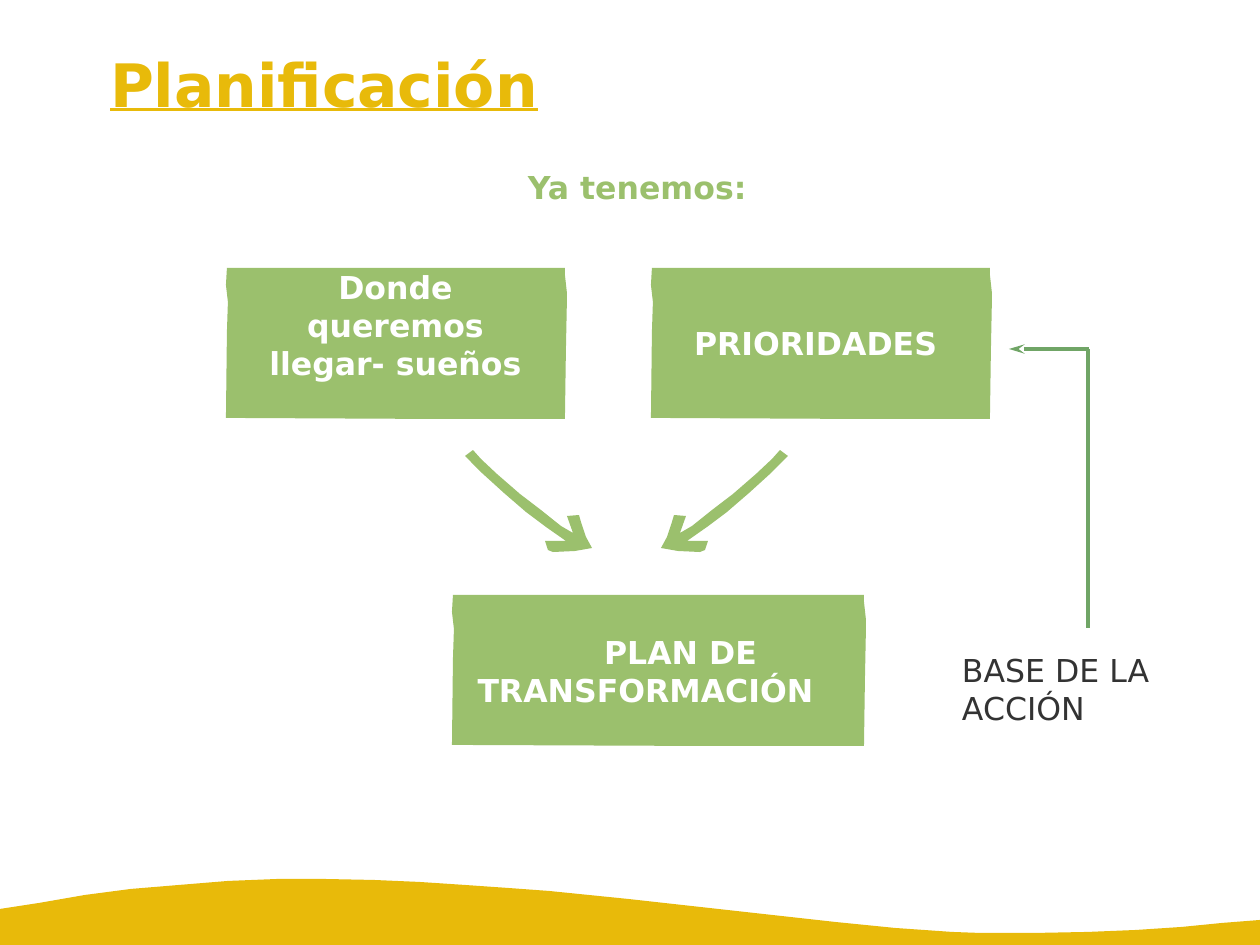
import pptx
import pptx.dml.color
import pptx.enum.shapes
import pptx.enum.text
import pptx.oxml.ns
import pptx.util
import lxml.etree

PX = 8064
FONT = "DejaVu Sans"
GOLD, GREEN, ARROW_GREEN = "E8BA0A", "9BC06D", "70A566"
WHITE, DARK = "FFFFFF", "333333"
LEFT = pptx.enum.text.PP_ALIGN.LEFT
CENTER = pptx.enum.text.PP_ALIGN.CENTER

WAVE = [
    (0, 30), (39, 24), (85, 16), (131, 10), (179, 6), (228, 2), (277, 0),
    (325, 0), (374, 1), (420, 3), (465, 6), (508, 9), (549, 12), (628, 20),
    (835, 43), (895, 49), (924, 51), (952, 53), (980, 54), (1035, 54),
    (1088, 53), (1136, 51), (1182, 48), (1222, 44), (1260, 41),
    (1260, 66), (0, 66),
]
BRUSH_ARROW = [
    (119, 0), (127, 6), (110, 23), (88, 43), (66, 62), (46, 77), (36, 84),
    (26, 91), (47, 91), (44, 100), (39, 102), (17, 101), (0, 98), (6, 87),
    (11, 72), (13, 65), (25, 66), (19, 83), (31, 76), (51, 60), (72, 44),
    (95, 24), (111, 9),
]


def color(value):
    return pptx.dml.color.RGBColor.from_string(value)


def add_outline(slide, box, points, fill):
    left, top = box[:2]
    placed = [(left + x, top + y) for x, y in points]
    builder = slide.shapes.build_freeform(*placed[0], scale=PX)
    builder.add_line_segments(placed[1:], close=True)
    shape = builder.convert_to_shape()
    shape.shadow.inherit = False
    shape.fill.solid()
    shape.fill.fore_color.rgb = color(fill)
    shape.line.fill.background()


def add_text(slide, box, text, fill, size=20, bold=True, underline=False,
             align=LEFT, spacing=None, indent=0):
    shape = slide.shapes.add_textbox(*(length * PX for length in box))
    frame = shape.text_frame
    frame.word_wrap = True
    frame.margin_left = frame.margin_right = 0
    frame.margin_top = frame.margin_bottom = 0
    paragraph = frame.paragraphs[0]
    paragraph.alignment = align
    if spacing:
        paragraph.line_spacing = pptx.util.Pt(spacing)
    if indent:
        paragraph._p.get_or_add_pPr().set("indent", str(indent * PX))
    run = paragraph.add_run()
    run.text = text
    run.font.name = FONT
    run.font.size = pptx.util.Pt(size)
    run.font.bold = bold
    run.font.underline = underline
    run.font.color.rgb = color(fill)


def add_card(slide, box, text, inset, align=LEFT, indent=0):
    left, top, width, height = box
    outline = [
        (1, 0), (0, 17), (2, 34), (1, 64), (0, height - 1),
        (round(width * 0.6), height), (width - 2, height),
        (width - 1, 83), (width, 32), (width, 25), (width - 2, 7),
        (width - 2, 0),
    ]
    add_outline(slide, box, outline, GREEN)
    inset_left, inset_top, text_width = inset
    text_box = (left + inset_left, top + inset_top, text_width, height - inset_top)
    add_text(slide, text_box, text, WHITE, align=align, indent=indent)


def add_brush_arrow(slide, box, mirrored=False):
    width = box[2]
    points = [(width - x if mirrored else x, y) for x, y in BRUSH_ARROW]
    add_outline(slide, box, points, GREEN)


def add_line(slide, start, end, arrowhead=False):
    connector = slide.shapes.add_connector(
        pptx.enum.shapes.MSO_CONNECTOR.STRAIGHT,
        *(length * PX for length in (*start, *end)))
    connector.line.color.rgb = color(ARROW_GREEN)
    connector.line.width = pptx.util.Pt(2)
    if arrowhead:
        lxml.etree.SubElement(
            connector.line._get_or_add_ln(), pptx.oxml.ns.qn("a:tailEnd"),
            type="stealth", w="med", len="lg")
    lxml.etree.SubElement(connector._element.spPr, pptx.oxml.ns.qn("a:effectLst"))


def add_feedback(slide, box):
    left, top, width, height = box
    right = left + width
    add_line(slide, (right, top + height), (right, top))
    add_line(slide, (right + 1, top), (left, top), arrowhead=True)
    add_text(slide, (right - 126, top + height + 23, 245, 76),
             "BASE DE LA ACCIÓN", DARK, bold=False)


def add_header(slide, box):
    left, top, width, height = box
    add_text(slide, (left, top, width, 71), "Planificación", GOLD,
             size=38, underline=True, spacing=44.5)
    add_text(slide, (left + 418, top + height - 39, 244, 39), "Ya tenemos:",
             GREEN, spacing=23.4)


def add_plan_diagram(slide, box):
    left, top = box[:2]
    add_card(slide, (left, top, 341, 151), "Donde queremos llegar- sueños",
             (29, 0, 281), CENTER)
    add_card(slide, (left + 425, top, 341, 151), "PRIORIDADES", (43, 56, 257))
    add_card(slide, (left + 226, top + 327, 414, 151), "PLAN DE TRANSFORMACIÓN",
             (10, 38, 367), CENTER, indent=70)
    add_brush_arrow(slide, (left + 239, top + 182, 127, 102), mirrored=True)
    add_brush_arrow(slide, (left + 435, top + 182, 127, 102))
    add_feedback(slide, (left + 783, top + 81, 79, 279))


def main():
    presentation = pptx.Presentation()
    presentation.slide_width = 1260 * PX
    presentation.slide_height = 945 * PX
    slide = presentation.slides.add_slide(presentation.slide_layouts[6])
    add_outline(slide, (0, 879, 1260, 66), WAVE, GOLD)
    add_header(slide, (110, 49, 1042, 159))
    add_plan_diagram(slide, (226, 268, 926, 478))
    presentation.save("out.pptx")


if __name__ == "__main__":
    main()
